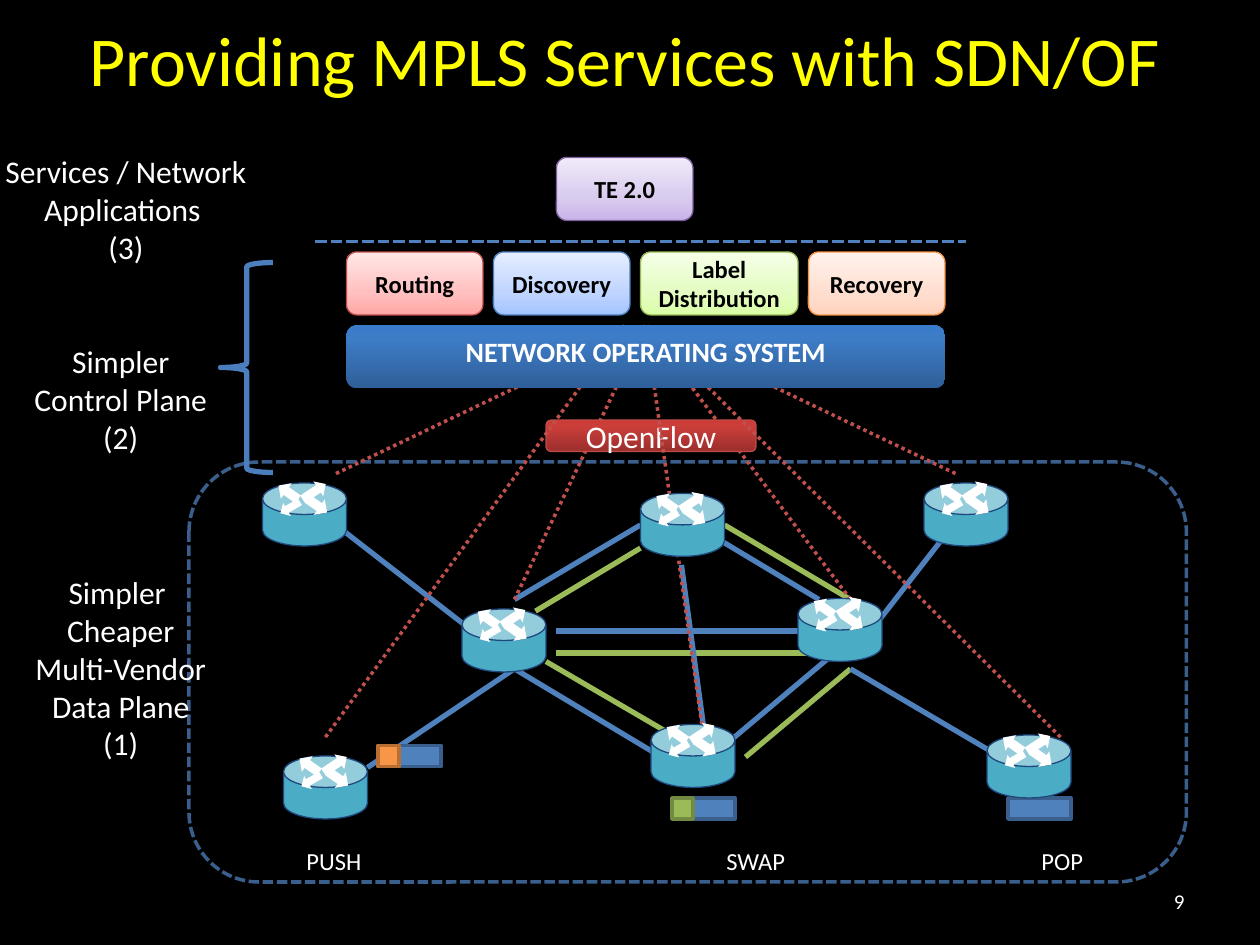
from copy import deepcopy
from typing import NamedTuple

from pptx import Presentation
from pptx.dml.color import RGBColor
from pptx.enum.dml import MSO_LINE
from pptx.enum.shapes import MSO_CONNECTOR, MSO_SHAPE
from pptx.enum.text import MSO_ANCHOR, PP_ALIGN
from pptx.oxml.ns import qn
from pptx.oxml.xmlchemy import OxmlElement
from pptx.util import Cm, Pt

CELL = 2.54 / 12
BLUE, GREEN, RED = "4F81BD", "9BBB59", "C0504D"
NAVY, WHITE, BLACK = "3A5F8C", "FFFFFF", "000000"
DASH, DOT = MSO_LINE.SQUARE_DOT, MSO_LINE.ROUND_DOT
ROUND = MSO_SHAPE.ROUNDED_RECTANGLE


class Area(NamedTuple):
    x: float
    y: float
    w: float
    h: float


class Link(NamedTuple):
    x1: float
    y1: float
    x2: float
    y2: float
    tint: str


class Block(NamedTuple):
    text: str
    area: Area
    edge: str
    stops: tuple


class Label(NamedTuple):
    text: str
    area: Area
    look: dict


class Arrow(NamedTuple):
    kind: MSO_SHAPE
    area: Area
    turn: float


def unit(n: float) -> Cm:
    return Cm(n * CELL)


def hue(code: str) -> RGBColor:
    return RGBColor.from_string(code)


def write(shape, text: str, *, size=18, tint=WHITE, bold=False,
          align=PP_ALIGN.CENTER, anchor=MSO_ANCHOR.TOP) -> None:
    frame = shape.text_frame
    frame.word_wrap = True
    frame.vertical_anchor = anchor
    for i, row in enumerate(text.split("\n")):
        para = frame.add_paragraph() if i else frame.paragraphs[0]
        para.alignment = align
        run = para.add_run()
        run.text = row
        font = run.font
        font.name, font.size, font.bold = "Calibri", Pt(size), bold
        font.color.rgb = hue(tint)


def draw(kind, area: Area, fill=None, edge=None, width=2.0, dash=None):
    shape = shapes.add_shape(kind, *map(unit, area))
    shape.shadow.inherit = False
    if fill:
        shape.fill.solid()
        shape.fill.fore_color.rgb = hue(fill)
    else:
        shape.fill.background()
    if edge:
        shape.line.color.rgb = hue(edge)
        shape.line.width = Pt(width)
        if dash:
            shape.line.dash_style = dash
    else:
        shape.line.fill.background()
    return shape


def shade(shape, stops: tuple) -> None:
    shape.fill.gradient()
    shape.fill.gradient_angle = 90
    items = shape._element.spPr.find(".//" + qn("a:gsLst"))
    items.insert(1, deepcopy(items[0]))
    for stop, (place, code) in zip(shape.fill.gradient_stops, stops):
        stop.position = place
        stop.color.rgb = hue(code)


def block(item: Block, **look) -> None:
    shape = draw(ROUND, item.area, edge=item.edge, width=0.75)
    shade(shape, item.stops)
    write(shape, item.text, **look)


def join(link: Link, width: float, dash=None) -> None:
    line = shapes.add_connector(MSO_CONNECTOR.STRAIGHT, *map(unit, link[:4]))
    line.line.color.rgb = hue(link.tint)
    line.line.width = Pt(width)
    if dash:
        line.line.dash_style = dash
    line._element.spPr.append(OxmlElement("a:effectLst"))


def label(item: Label) -> None:
    write(shapes.add_textbox(*map(unit, item.area)), item.text, **item.look)


def packet(x: float, y: float, fill=None, edge=None) -> None:
    draw(MSO_SHAPE.RECTANGLE, Area(x, y, 6, 2), BLUE, NAVY)
    if fill:
        draw(MSO_SHAPE.RECTANGLE, Area(x, y, 2, 2), fill, edge)


ARROWS = (
    Arrow(MSO_SHAPE.DOWN_ARROW, Area(1.92, 1.26, 1.44, 2.16), 59.9),
    Arrow(MSO_SHAPE.DOWN_ARROW, Area(4.08, -0.5, 1.68, 2.64), 236.4),
    Arrow(MSO_SHAPE.RIGHT_ARROW, Area(1.32, 0, 2.28, 1.8), 215),
    Arrow(MSO_SHAPE.RIGHT_ARROW, Area(4.08, 1.26, 2.28, 1.8), 35),
)


def router(x: float, y: float) -> None:
    can = draw(MSO_SHAPE.CAN, Area(x, y, 8, 6), "4BACC6", "1F497D", 0.75)
    can.adjustments[0] = 0.5
    for kind, (dx, dy, w, h), turn in ARROWS:
        draw(kind, Area(x + dx, y + dy, w, h), WHITE).rotation = turn


def pale(low: str, mid: str, high: str) -> tuple:
    return (0, low), (0.35, mid), (1, high)


LINKS = (
    Link(78, 57.1, 68, 51.1, BLUE), Link(53, 60.1, 77, 60.1, BLUE),
    Link(81, 57.1, 69, 50, GREEN), Link(49, 63.7, 63, 72.1, BLUE),
    Link(71, 72.1, 81, 63.7, GREEN), Link(45, 60.1, 32, 50, BLUE),
    Link(83, 60, 90, 51, BLUE), Link(97, 73.1, 81, 63.7, BLUE),
    Link(35, 73.1, 49, 63.7, BLUE), Link(53, 62.2, 77, 62.2, GREEN),
    Link(51, 58.2, 61, 52.2, GREEN), Link(52, 63, 64, 70, GREEN),
    Link(64.9, 53.8, 67, 69.1, BLUE), Link(49, 57.1, 61, 50, BLUE),
    Link(69, 71, 79, 62.6, BLUE),
)
BACK = ((32, 45.1, 61.5), (49, 57.1, 61.5), (91, 45.1, 61.5), (81, 57.1, 61.5))
FRONT = ((31, 70.2, 59.5), (101, 70.2, 61.5), (67.4, 73, 61.5))
FLOW = Block("OpenFlow", Area(52, 40, 20, 3), "BF4C48",
             ((0, "9C2F2D"), (0.8, "CB3E3A"), (1, "CE3B37")))
APPS = (
    Block("Routing", Area(33, 24, 13, 6), "BF4C48", pale("FFA6A5", "FFC0BF", "FFE7E7")),
    Block("Discovery", Area(47, 24, 13, 6), "4B7EBC", pale("A4C4FF", "BFD4FF", "E6EEFF")),
    Block("Label Distribution", Area(61, 24, 15, 6), "98B955",
          pale("DAFDA7", "E4FCC2", "F5FFE7")),
    Block("Recovery", Area(77, 24, 13, 6), "F69240", pale("FFD2BD", "FFDED0", "FFF2ED")),
    Block("TE 2.0", Area(53, 15, 13, 6), "7D60A0", pale("C9B5E8", "D8CBEE", "F0EAF9")),
)
TAG = {"size": 14, "align": PP_ALIGN.LEFT}
LABELS = (
    Label("Providing MPLS Services with SDN/OF", Area(3, 1, 113, 18),
          {"size": 40, "tint": "FFFF00"}),
    Label("Simpler \nCheaper\nMulti-Vendor\nData Plane\n(1)", Area(2, 54, 19, 19.4), {}),
    Label("Simpler Control Plane\n(2)", Area(2, 32, 19, 12.1), {}),
    Label("Services / Network Applications \n(3)", Area(-1, 13.9, 26, 12.1), {}),
    Label("PUSH", Area(28, 80, 8, 4), TAG),
    Label("SWAP", Area(68, 80, 10, 4), TAG),
    Label("POP", Area(98, 80, 10, 4), TAG),
    Label("9", Area(86, 83.4, 28, 4.8),
          {"size": 12, "align": PP_ALIGN.RIGHT, "anchor": MSO_ANCHOR.MIDDLE}),
)
NODES = ((88, 46), (25, 46), (27, 72), (44, 58), (62, 69), (76, 57), (94, 70), (61, 47))

deck = Presentation()
deck.slide_width, deck.slide_height = Cm(25.4), Cm(19.05)
slide = deck.slides.add_slide(deck.slide_layouts[6])
slide.background.fill.solid()
slide.background.fill.fore_color.rgb = hue(BLACK)
shapes = slide.shapes

for link in LINKS:
    join(link, 3)
draw(ROUND, Area(18, 44, 95, 40), edge=NAVY, dash=DASH)
for x, y, end in BACK:
    join(Link(x, y, end, 31, RED), 2, DOT)
block(FLOW, anchor=MSO_ANCHOR.MIDDLE)
for x, y, end in FRONT:
    join(Link(x, y, end, 31, RED), 2, DOT)

base = draw(ROUND, Area(33, 31, 57, 6))
shade(base, ((0, "2F5F99"), (0.8, "3D7CC7"), (1, "3A7CCB")))
write(base, "NETWORK OPERATING SYSTEM", size=16, bold=True)
for app in APPS:
    block(app, size=14, tint=BLACK, bold=True, anchor=MSO_ANCHOR.MIDDLE)

draw(MSO_SHAPE.LEFT_BRACE, Area(21, 25, 5, 20), edge="4B7EBC", width=3)
join(Link(30, 23, 92, 23, BLUE), 2.25, DASH)
packet(64, 76, GREEN, "738A42")
packet(96, 76)
packet(36, 71, "F79646", "B76F34")
for x, y in NODES:
    router(x, y)
for item in LABELS:
    label(item)

deck.save("out.pptx")
